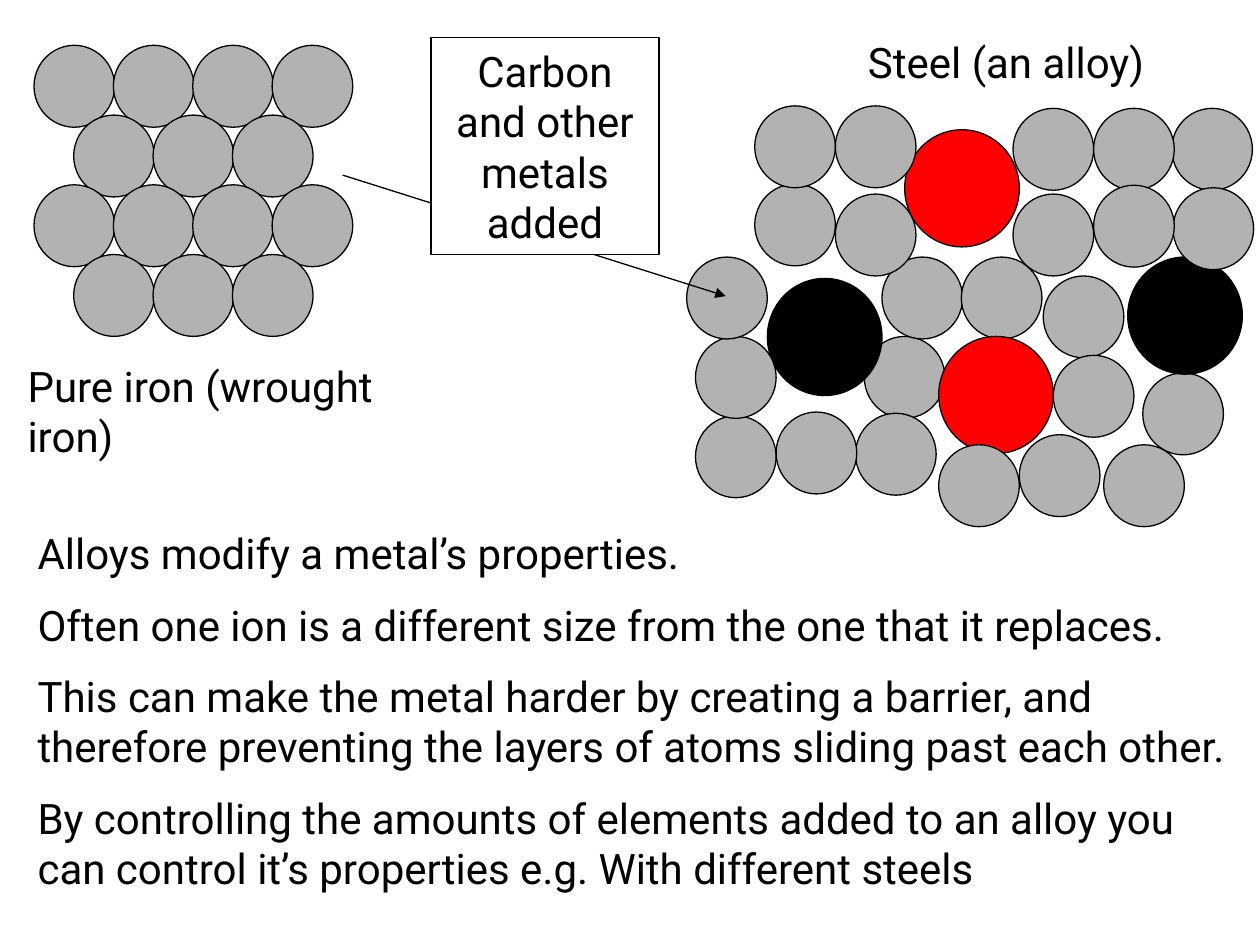
from lxml import etree
from pptx import Presentation
from pptx.dml.color import RGBColor
from pptx.enum.shapes import MSO_CONNECTOR, MSO_SHAPE
from pptx.enum.text import MSO_AUTO_SIZE, PP_ALIGN
from pptx.oxml.ns import qn
from pptx.util import Inches, Pt

OVAL = MSO_SHAPE.OVAL
RECTANGLE = MSO_SHAPE.RECTANGLE
STRAIGHT = MSO_CONNECTOR.STRAIGHT
GROW = MSO_AUTO_SIZE.SHAPE_TO_FIT_TEXT
LEFT, CENTER = PP_ALIGN.LEFT, PP_ALIGN.CENTER

THEME = {
    "font": "Roboto",
    "size": Pt(24),
    "gap": Pt(12),
    "line": Pt(0.75),
    "ink": RGBColor(0, 0, 0),
    "paper": RGBColor(255, 255, 255),
    "iron": RGBColor(0xB2, 0xB2, 0xB2),
    "red": RGBColor(255, 0, 0),
    "black": RGBColor(0, 0, 0),
}

NOTES = [
    "Alloys modify a metal’s properties.",
    "Often one ion is a different size from the one that it replaces.",
    "This can make the metal harder by creating a barrier, and therefore "
    "preventing the layers of atoms sliding past each other.",
    "By controlling the amounts of elements added to an alloy you can control "
    "it’s properties e.g. With different steels",
]
NOTES_AREA = (0.2, 4.14, 9.8, 3.13)
CAPTIONS = [
    ("Pure iron (wrought iron)", (0.12, 2.81, 2.99, 0.91)),
    ("Steel (an alloy)", (6.79, 0.24, 2.99, 0.51)),
]
ADDITION = "Carbon and other metals added"
ADDITION_AREA = (3.42, 0.3, 1.81, 1.72)
ARROW = (2.72, 1.39, 5.76, 2.35)

ATOM_SIZES = {"iron": (0.64, 0.65), "red": (0.91, 0.93), "black": (0.91, 0.93)}
STEEL_ATOMS = [
    ("iron", [(6.86, 2.67), (7, 2.04), (7.63, 2.04)]),
    ("red", [(7.45, 2.67)]),
    ("iron", [(8.28, 2.19), (6.63, 1.54)]),
    ("red", [(7.18, 1.03)]),
    ("iron", [(8.04, 1.54), (9.07, 2.96)]),
    ("black", [(6.09, 2.21)]),
    ("iron", [(6.79, 3.28), (5.52, 3.3)]),
    ("black", [(8.95, 2.04)]),
    ("iron", [
        (8.36, 2.82), (8.76, 3.53), (5.52, 2.67), (5.45, 2.04), (8.04, 0.86),
        (9.3, 0.86), (5.99, 1.46), (7.45, 3.53), (8.09, 3.45), (9.31, 1.49),
        (5.99, 0.84), (6.63, 0.84), (8.68, 0.86), (8.68, 1.47), (6.16, 3.27),
    ]),
]

LATTICE_LEFT, LATTICE_TOP, LATTICE_LAST_TOP = 0.27, 0.36, 2.02
LATTICE_STEP = 0.63
LATTICE_ROWS = [4, 3, 4, 3]


def lattice_positions():
    row_step = (LATTICE_LAST_TOP - LATTICE_TOP) / (len(LATTICE_ROWS) - 1)
    widest = max(LATTICE_ROWS)
    return [
        (LATTICE_LEFT + LATTICE_STEP * (column + (widest - count) / 2),
         LATTICE_TOP + row * row_step)
        for row, count in enumerate(LATTICE_ROWS)
        for column in range(count)
    ]


def style_shape(shape, color):
    shape.shadow.inherit = False
    shape.fill.solid()
    shape.fill.fore_color.rgb = color
    shape.line.color.rgb = THEME["ink"]
    shape.line.width = THEME["line"]


def add_atoms(page, layers):
    group = page.shapes.add_group_shape()
    for kind, positions in layers:
        for position in positions:
            area = map(Inches, position + ATOM_SIZES[kind])
            style_shape(group.shapes.add_shape(OVAL, *area), THEME[kind])


def write_text(box, texts, alignment=LEFT):
    frame = box.text_frame
    frame.text = "\n".join(texts)
    frame.word_wrap = True
    frame.auto_size = GROW
    for index, para in enumerate(frame.paragraphs):
        para.alignment = alignment
        para.space_before = THEME["gap"] if index else Pt(0)
        for span in para.runs:
            span.font.name = THEME["font"]
            span.font.size = THEME["size"]
            span.font.color.rgb = THEME["ink"]


def add_text(page, texts, area):
    write_text(page.shapes.add_textbox(*map(Inches, area)), texts)


def add_arrow(page, ends):
    arrow = page.shapes.add_connector(STRAIGHT, *map(Inches, ends))
    arrow.line.color.rgb = THEME["ink"]
    arrow.line.width = THEME["line"]
    etree.SubElement(arrow.line._get_or_add_ln(), qn("a:tailEnd"), type="triangle")
    etree.SubElement(arrow._element.spPr, qn("a:effectLst"))


def main():
    deck = Presentation()
    deck.slide_width, deck.slide_height = Inches(10), Inches(7.5)
    page = deck.slides.add_slide(deck.slide_layouts[6])
    add_text(page, NOTES, NOTES_AREA)
    add_atoms(page, STEEL_ATOMS)
    add_atoms(page, [("iron", lattice_positions())])
    add_arrow(page, ARROW)
    for caption, area in CAPTIONS:
        add_text(page, [caption], area)
    addition = page.shapes.add_shape(RECTANGLE, *map(Inches, ADDITION_AREA))
    style_shape(addition, THEME["paper"])
    write_text(addition, [ADDITION], CENTER)
    deck.save("out.pptx")


if __name__ == "__main__":
    main()
